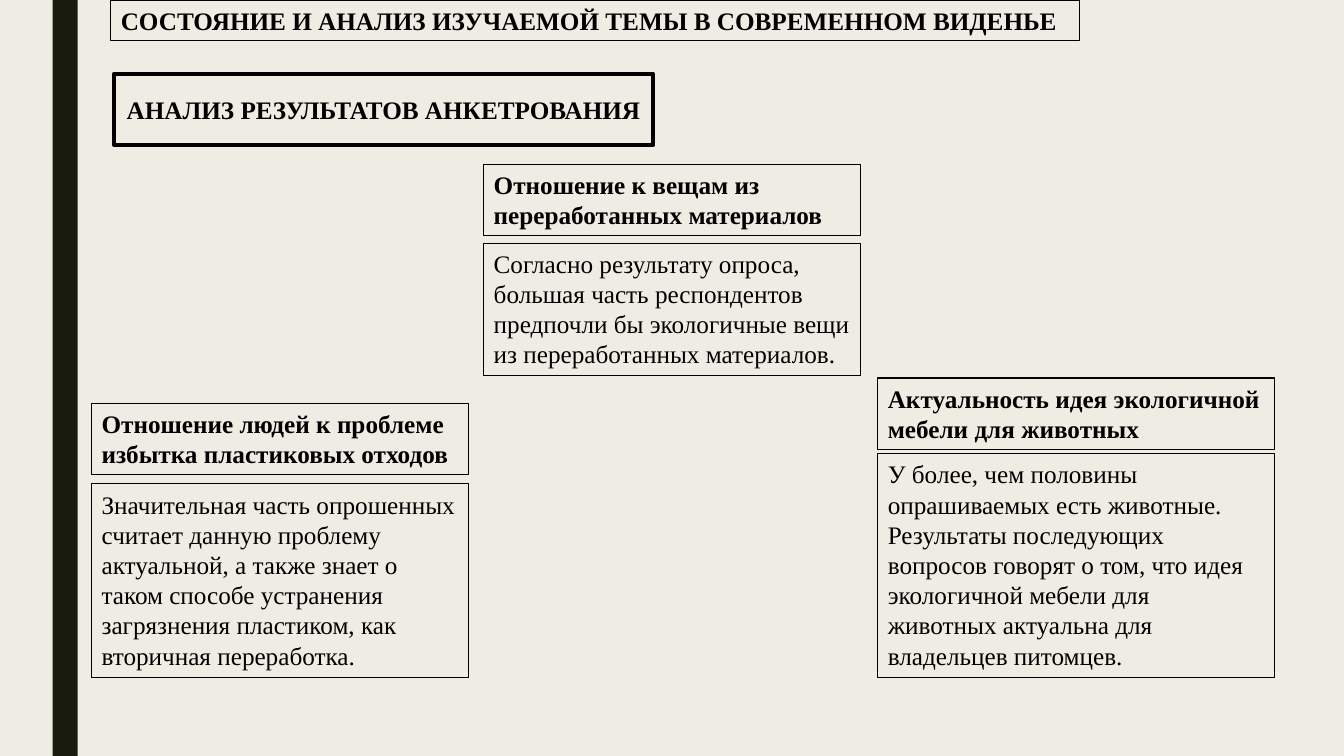
from pptx import Presentation
from pptx.dml.color import RGBColor
from pptx.enum.shapes import MSO_SHAPE
from pptx.enum.text import MSO_ANCHOR, MSO_AUTO_SIZE, PP_ALIGN
from pptx.util import Pt

RECTANGLE = MSO_SHAPE.RECTANGLE
TOP, MIDDLE = MSO_ANCHOR.TOP, MSO_ANCHOR.MIDDLE
LEFT, CENTER = PP_ALIGN.LEFT, PP_ALIGN.CENTER
GROW, FIXED = MSO_AUTO_SIZE.SHAPE_TO_FIT_TEXT, MSO_AUTO_SIZE.NONE

CREAM = RGBColor(0xEF, 0xED, 0xE3)
DARK_OLIVE = RGBColor(0x19, 0x1B, 0x0E)
BLACK = RGBColor(0, 0, 0)

SLIDE_WIDTH, SLIDE_HEIGHT = 960, 540
HEADING_HEIGHT = 51
FONT_FORMAT = {"name": "Times New Roman", "size": Pt(18)}
GROWING_FRAME = {"word_wrap": True, "vertical_anchor": TOP, "auto_size": GROW}
CENTERED_FRAME = {"word_wrap": True, "vertical_anchor": MIDDLE, "auto_size": FIXED}

FINDINGS = [
    ((65.5, 288, 269.3, 195.8), 6.6,
     "Отношение людей к проблеме избытка пластиковых отходов",
     "Значительная часть опрошенных считает данную проблему актуальной, "
     "а также знает о таком способе устранения загрязнения пластиком, "
     "как вторичная переработка."),
    ((345.6, 117.4, 269.3, 150.5), 5.2,
     "Отношение к вещам из переработанных материалов",
     "Согласно результату опроса, большая часть респондентов предпочли бы "
     "экологичные вещи из переработанных материалов."),
    ((627.1, 270, 283, 213.8), 3,
     "Актуальность идея экологичной мебели для животных",
     "У более, чем половины опрашиваемых есть животные. Результаты "
     "последующих вопросов говорят о том, что идея экологичной мебели "
     "для животных актуальна для владельцев питомцев."),
]


def apply_format(target, values):
    for attribute, value in values.items():
        setattr(target, attribute, value)


def add_side_stripe(slide, box):
    stripe = slide.shapes.add_shape(RECTANGLE, *map(Pt, box))
    stripe.shadow.inherit = False
    stripe.fill.solid()
    stripe.fill.fore_color.rgb = DARK_OLIVE
    stripe.line.fill.background()


def add_framed_text(slide, box, text, bold=True, border=0.75,
                    align=LEFT, frame_format=GROWING_FRAME):
    panel = slide.shapes.add_shape(RECTANGLE, *map(Pt, box))
    panel.shadow.inherit = False
    panel.fill.background()
    panel.line.color.rgb = BLACK
    panel.line.width = Pt(border)
    apply_format(panel.text_frame, frame_format)
    paragraph = panel.text_frame.paragraphs[0]
    paragraph.alignment = align
    wording = paragraph.add_run()
    wording.text = text
    apply_format(wording.font, {**FONT_FORMAT, "bold": bold})
    wording.font.color.rgb = BLACK


def add_finding(slide, box, gap, heading, conclusion):
    left, top, width, height = box
    offset = HEADING_HEIGHT + gap
    add_framed_text(slide, (left, top, width, HEADING_HEIGHT), heading)
    add_framed_text(slide, (left, top + offset, width, height - offset),
                    conclusion, bold=False)


def main():
    presentation = Presentation()
    presentation.slide_width = Pt(SLIDE_WIDTH)
    presentation.slide_height = Pt(SLIDE_HEIGHT)
    slide = presentation.slides.add_slide(presentation.slide_layouts[6])
    slide.background.fill.solid()
    slide.background.fill.fore_color.rgb = CREAM

    add_side_stripe(slide, (37.5, 0, 18, SLIDE_HEIGHT))
    for finding in FINDINGS:
        add_finding(slide, *finding)
    add_framed_text(slide, (81.4, 52.6, 385.2, 51),
                    "АНАЛИЗ РЕЗУЛЬТАТОВ АНКЕТРОВАНИЯ",
                    border=2.75, align=CENTER, frame_format=CENTERED_FRAME)
    add_framed_text(slide, (79.2, 0, 692, 29),
                    "СОСТОЯНИЕ И АНАЛИЗ ИЗУЧАЕМОЙ ТЕМЫ В СОВРЕМЕННОМ ВИДЕНЬЕ")
    presentation.save("out.pptx")


if __name__ == "__main__":
    main()
